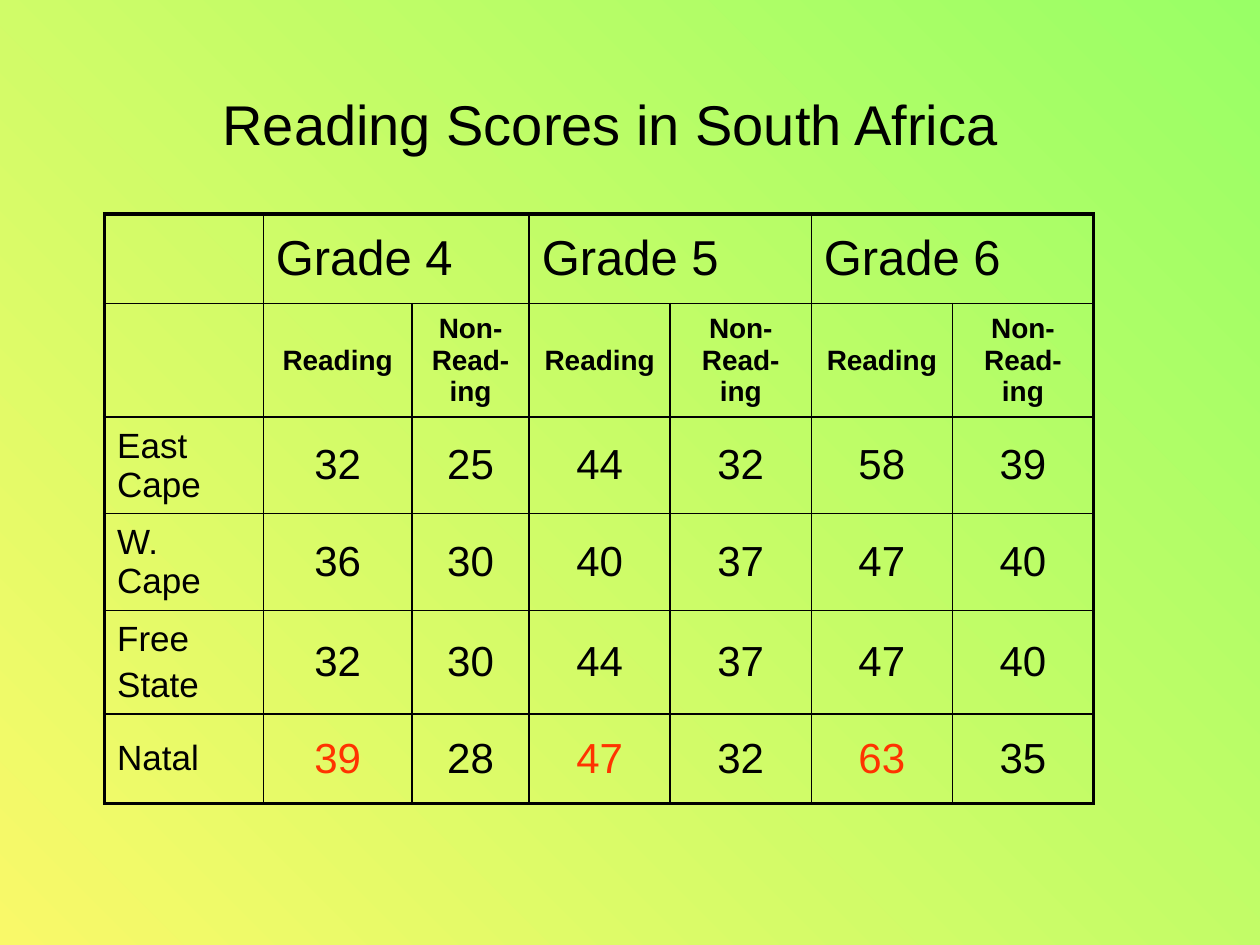
from dataclasses import dataclass

from lxml.etree import SubElement
from pptx import Presentation
from pptx.dml.color import RGBColor
from pptx.enum.text import MSO_ANCHOR as Anchor, PP_ALIGN as Align
from pptx.oxml.ns import qn
from pptx.table import Table, _Cell as Cell
from pptx.text.text import TextFrame
from pptx.util import Inches, Pt

BLACK, RED = "000000", "FF3300"
YELLOW, GREEN = "F9F969", "99FF66"
THIN, THICK = 1, 2.25
COLUMN_WIDTHS = [1.26, 1.18, 0.93] + [1.12] * 4
ROW_HEIGHTS = [0.71, 0.84, 0.72, 0.72, 0.78, 0.71]
GRADES = ["Grade 4", "Grade 5", "Grade 6"]
GROUPS = ["Reading", "Non-Read-ing"]


@dataclass(frozen=True)
class TextStyle:
    size: int
    align: Align = Align.LEFT
    bold: bool = False
    color: str = BLACK


@dataclass(frozen=True)
class Province:
    name: str
    scores: tuple[int, ...]
    highlight_reading: bool = False


TITLE = TextStyle(32, Align.CENTER)
GRADE = TextStyle(28)
GROUP = TextStyle(16, Align.CENTER, bold=True)
NAME = TextStyle(20)
SCORE = TextStyle(24, Align.CENTER)
TOP_SCORE = TextStyle(24, Align.CENTER, color=RED)

PROVINCES = [
    Province("East Cape", (32, 25, 44, 32, 58, 39)),
    Province("W. Cape", (36, 30, 40, 37, 47, 40)),
    Province("Free\nState", (32, 30, 44, 37, 47, 40)),
    Province("Natal", (39, 28, 47, 32, 63, 35), highlight_reading=True),
]


def rgb(value: str) -> RGBColor:
    return RGBColor.from_string(value)


def write(frame: TextFrame, text: str, style: TextStyle) -> None:
    frame.text = text
    font_values = {"name": "Arial", "size": Pt(style.size), "bold": style.bold}
    for index, paragraph in enumerate(frame.paragraphs):
        paragraph.alignment = style.align
        if index:
            paragraph.space_before = Pt(style.size * 0.2)
        font = paragraph.runs[0].font
        for attribute, value in font_values.items():
            setattr(font, attribute, value)
        font.color.rgb = rgb(style.color)


def write_cell(cell: Cell, text: str, style: TextStyle) -> None:
    cell.vertical_anchor = Anchor.MIDDLE
    write(cell.text_frame, text, style)


def draw_borders(cell: Cell, outer_sides: dict[str, bool]) -> None:
    properties = cell._tc.get_or_add_tcPr()
    for side, is_outer in outer_sides.items():
        width = Pt(THICK if is_outer else THIN)
        line = SubElement(properties, qn(f"a:ln{side}"), w=str(int(width)))
        fill = SubElement(line, qn("a:solidFill"))
        SubElement(fill, qn("a:srgbClr"), val=BLACK)
    cell.fill.background()


def fill_table(table: Table) -> None:
    for index, grade in enumerate(GRADES):
        left = 1 + index * len(GROUPS)
        table.cell(0, left).merge(table.cell(0, left + 1))
        write_cell(table.cell(0, left), grade, GRADE)
        for offset, group in enumerate(GROUPS):
            write_cell(table.cell(1, left + offset), group, GROUP)
    for row, province in enumerate(PROVINCES, start=2):
        write_cell(table.cell(row, 0), province.name, NAME)
        for column, score in enumerate(province.scores, start=1):
            is_reading = column % 2 == 1
            style = TOP_SCORE if province.highlight_reading and is_reading else SCORE
            write_cell(table.cell(row, column), str(score), style)


def format_table(table: Table) -> None:
    for attribute in ("first_row", "horz_banding"):
        setattr(table, attribute, False)
    for column, width in zip(table.columns, COLUMN_WIDTHS):
        column.width = Inches(width)
    for row, height in zip(table.rows, ROW_HEIGHTS):
        row.height = Inches(height)
    for r in range(len(ROW_HEIGHTS)):
        for c in range(len(COLUMN_WIDTHS)):
            cell = table.cell(r, c)
            draw_borders(cell, {
                "L": c == 0,
                "R": c + cell.span_width == len(COLUMN_WIDTHS) or c + 1 == len(COLUMN_WIDTHS),
                "T": r == 0,
                "B": r + 1 == len(ROW_HEIGHTS),
            })


def main() -> None:
    """Build the slide of reading scores by province and grade."""
    deck = Presentation()
    deck.slide_width, deck.slide_height = Inches(10), Inches(7.5)
    slide = deck.slides.add_slide(deck.slide_layouts[6])

    backdrop = slide.background.fill
    backdrop.gradient()
    backdrop.gradient_angle = 45
    for stop, color in zip(backdrop.gradient_stops, (YELLOW, GREEN)):
        stop.color.rgb = rgb(color)

    title = slide.shapes.add_textbox(
        Inches(0.59), Inches(0.6), Inches(8.51), Inches(6.06)
    ).text_frame
    title.word_wrap = True
    title.margin_top = Inches(0.11)
    write(title, "Reading Scores in South Africa", TITLE)

    scores = slide.shapes.add_table(
        len(ROW_HEIGHTS), len(COLUMN_WIDTHS), Inches(0.83), Inches(1.7),
        Inches(sum(COLUMN_WIDTHS)), Inches(sum(ROW_HEIGHTS)),
    ).table
    fill_table(scores)
    format_table(scores)

    deck.save("out.pptx")


if __name__ == "__main__":
    main()
